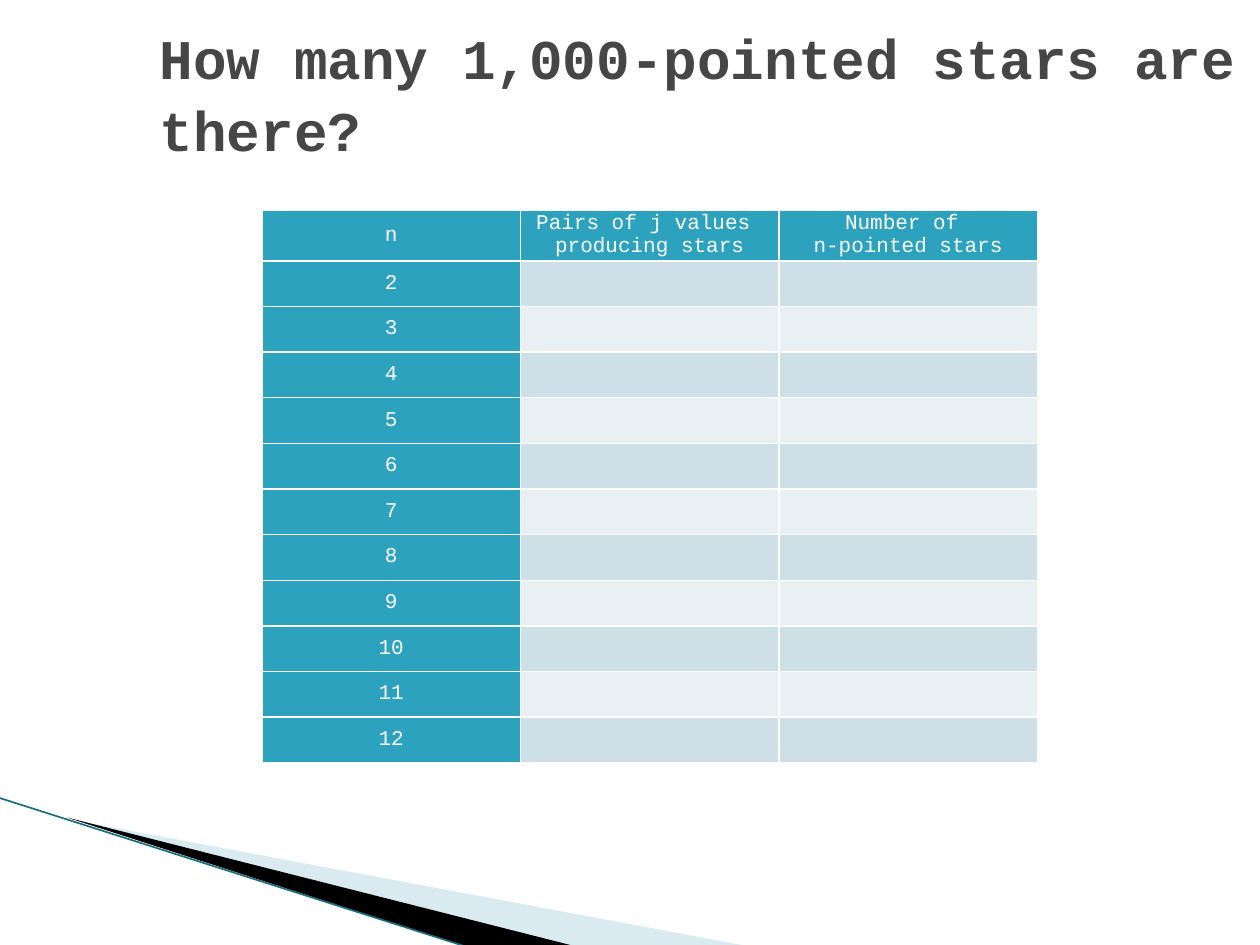
import pptx
import pptx.dml.color
import pptx.enum.shapes
import pptx.enum.text
import pptx.oxml
import pptx.oxml.ns
import pptx.util
from dataclasses import dataclass

Cm, Pt = pptx.util.Cm, pptx.util.Pt
RGB = pptx.dml.color.RGBColor.from_string
Align = pptx.enum.text.PP_ALIGN
Anchor = pptx.enum.text.MSO_ANCHOR


@dataclass(frozen=True)
class Theme:
    font: str = "Courier New"
    title: int = 32
    body: int = 12
    ink: str = "464646"
    white: str = "FFFFFF"
    teal: str = "2DA2BF"
    bands: tuple = ("CDE0E8", "E8F0F4")
    pale: str = "A0CBDC"
    black: str = "000000"
    edge: str = "1A6E80"


theme = Theme()


def style(par, size, color, bold=False):
    par.font.name = theme.font
    par.font.size = Pt(size)
    par.font.bold = bold
    par.font.color.rgb = RGB(color)


deck = pptx.Presentation()
deck.slide_width, deck.slide_height = Cm(25.4), Cm(19.05)
slide = deck.slides.add_slide(deck.slide_layouts[6])
shapes = slide.shapes

# Corner wedges: fill, opacity in percent, corners in cm
wedges = [
    (theme.pale, 40, [(1.4, 16.52), (15.11, 19.08), (11.58, 19.08)]),
    (theme.black, 100, [(1.35, 16.48), (11.61, 19.08), (9.45, 19.1)]),
]
for color, alpha, points in wedges:
    first, *rest = [(Cm(x), Cm(y)) for x, y in points]
    pen = shapes.build_freeform(*first)
    pen.add_line_segments(rest, close=True)
    wedge = pen.convert_to_shape()
    wedge.shadow.inherit = False
    wedge.line.fill.background()
    wedge.fill.solid()
    wedge.fill.fore_color.rgb = RGB(color)
    if alpha < 100:
        tint = wedge.fill._xPr.find(".//" + pptx.oxml.ns.qn("a:srgbClr"))
        node = pptx.oxml.parse_xml(
            f'<a:alpha {pptx.oxml.ns.nsdecls("a")} val="{alpha * 1000}"/>')
        tint.append(node)

edge = shapes.add_connector(pptx.enum.shapes.MSO_CONNECTOR.STRAIGHT,
                            Cm(-0.03), Cm(16.08), Cm(9.45), Cm(19.1))
edge.line.color.rgb = RGB(theme.edge)
edge.line.width = Pt(0.95)
edge._element.spPr.append(
    pptx.oxml.parse_xml(f'<a:effectLst {pptx.oxml.ns.nsdecls("a")}/>'))

# Title
title = shapes.add_textbox(Cm(2.97), Cm(0.4), Cm(22.43), Cm(2.8))
frame = title.text_frame
frame.word_wrap = True
frame.margin_top = frame.margin_bottom = 0
par = frame.paragraphs[0]
par.text = "How many 1,000-pointed stars are there?"
par.line_spacing = 1.06
style(par, theme.title, theme.ink, bold=True)

# Table: header row, then one row for each n
heads = ["n", "Pairs of j values \nproducing stars", "Number of \nn-pointed stars"]
rows = [heads] + [[str(n), "", ""] for n in range(2, 13)]
wide, head, tall = Cm(5.21), Cm(0.96), Cm(0.92)
table = shapes.add_table(len(rows), len(heads), Cm(5.28), Cm(4.24),
                         wide * len(heads), head + tall * (len(rows) - 1)).table
table.first_col = True
for col in table.columns:
    col.width = wide
for r, row in enumerate(rows):
    table.rows[r].height = tall if r else head
    for c, text in enumerate(row):
        cell = table.cell(r, c)
        cell.text = text
        cell.vertical_anchor = Anchor.MIDDLE
        cell.margin_left = cell.margin_right = Cm(0.18)
        cell.margin_top = cell.margin_bottom = 0
        cell.fill.solid()
        shade = theme.bands[(r - 1) % 2] if r and c else theme.teal
        cell.fill.fore_color.rgb = RGB(shade)
        for par in cell.text_frame.paragraphs:
            par.alignment = Align.CENTER
            style(par, theme.body, theme.white)

deck.save("out.pptx")
